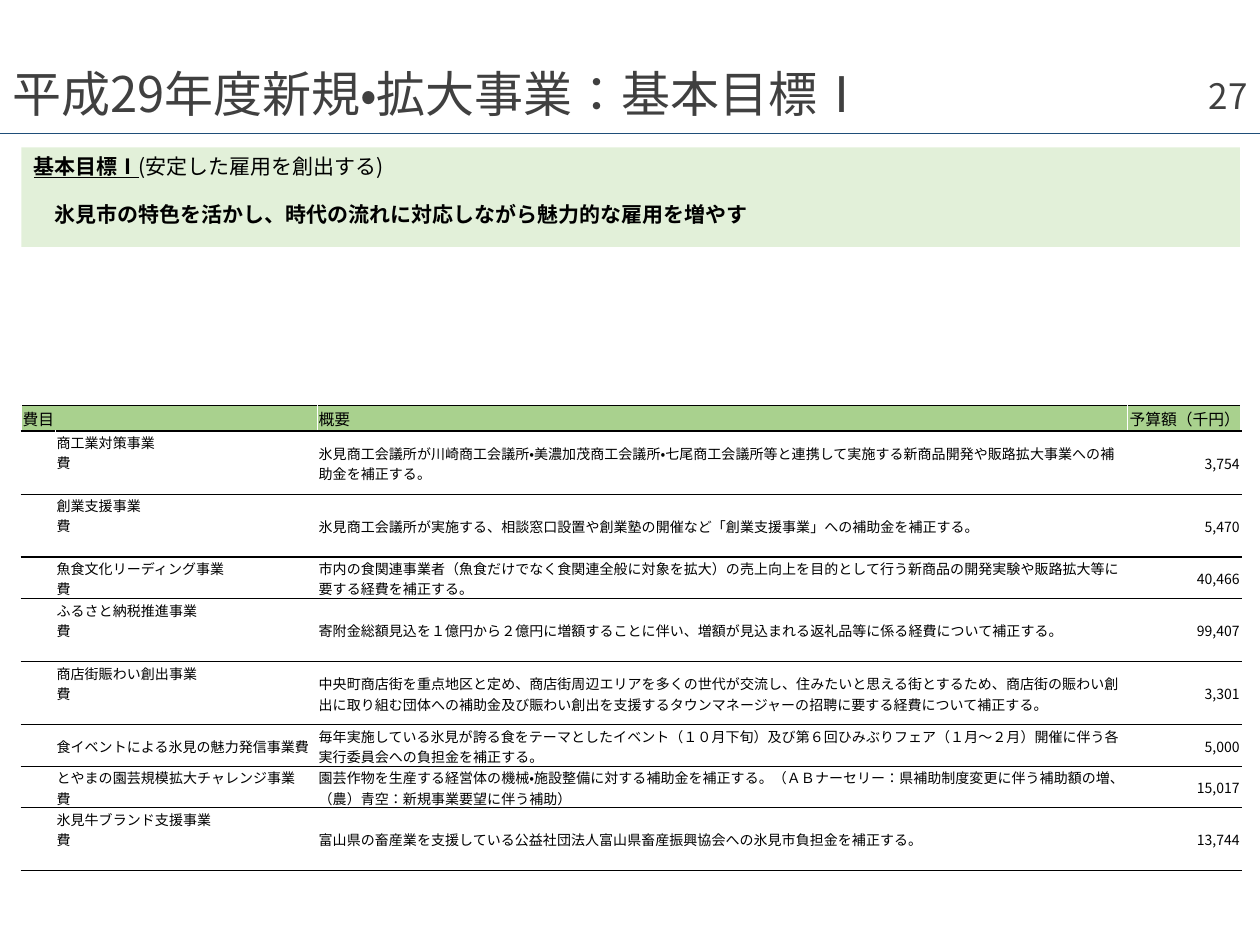
from pptx import Presentation
from pptx.dml.color import RGBColor
from pptx.enum.lang import MSO_LANGUAGE_ID as Lang
from pptx.enum.shapes import MSO_CONNECTOR, MSO_SHAPE
from pptx.enum.text import MSO_ANCHOR as Anchor, PP_ALIGN as Align
from pptx.oxml import parse_xml
from pptx.oxml.ns import nsdecls
from pptx.util import Inches, Pt

FONT = "Noto Sans CJK JP"
TITLE, PAGE = "平成29年度新規・拡大事業：基本目標Ⅰ", "27"
GOAL, NOTE = "基本目標Ⅰ", "(安定した雇用を創出する)"
AIM = "氷見市の特色を活かし、時代の流れに対応しながら魅力的な雇用を増やす"
HEAD = ("費目", "", "概要", "予算額（千円）")
# name, outline, budget, row height, weight of the line below
ITEMS = [
    ("商工業対策事業\v費",
     "氷見商工会議所が川崎商工会議所・美濃加茂商工会議所・七尾商工会議所等と連携して実施する"
     "新商品開発や販路拡大事業への補助金を補正する。", "3,754", 0.5, 0.5),
    ("創業支援事業\v費",
     "氷見商工会議所が実施する、相談窓口設置や創業塾の開催など「創業支援事業」への補助金を補正する。",
     "5,470", 0.5, 1),
    ("魚食文化リーディング事業\v費",
     "市内の食関連事業者（魚食だけでなく食関連全般に対象を拡大）の売上向上を目的として行う"
     "新商品の開発実験や販路拡大等に要する経費を補正する。", "40,466", 0.33, 0.5),
    ("ふるさと納税推進事業\v費",
     "寄附金総額見込を１億円から２億円に増額することに伴い、増額が見込まれる返礼品等に係る"
     "経費について補正する。", "99,407", 0.5, 1),
    ("商店街賑わい創出事業\v費",
     "中央町商店街を重点地区と定め、商店街周辺エリアを多くの世代が交流し、住みたいと思える街と"
     "するため、商店街の賑わい創出に取り組む団体への補助金及び賑わい創出を支援する"
     "タウンマネージャーの招聘に要する経費について補正する。", "3,301", 0.5, 0.5),
    ("食イベントによる氷見の魅力発信事業費",
     "毎年実施している氷見が誇る食をテーマとしたイベント（１０月下旬）及び第６回ひみぶりフェア"
     "（１月～２月）開催に伴う各実行委員会への負担金を補正する。", "5,000", 0.33, 0.5),
    ("とやまの園芸規模拡大チャレンジ事業\v費",
     "園芸作物を生産する経営体の機械・施設整備に対する補助金を補正する。（ＡＢナーセリー："
     "県補助制度変更に伴う補助額の増、（農）青空：新規事業要望に伴う補助）", "15,017", 0.33, 0.5),
    ("氷見牛ブランド支援事業\v費",
     "富山県の畜産業を支援している公益社団法人富山県畜産振興協会への氷見市負担金を補正する。",
     "13,744", 0.5, 1),
]
COLS = (0.27, 2.08, 6.43, 0.9)
HEAD_H = 0.2


def rgb(code):
    return RGBColor.from_string(code)


def style(para, size, color="000000", align=Align.LEFT):
    para.alignment = align
    font = para.font
    font.name, font.size = FONT, Pt(size)
    font.color.rgb = rgb(color)
    for run in para.runs:
        run.font.language_id = Lang.JAPANESE


def label(slide, box, text, size, align=Align.LEFT):
    frame = slide.shapes.add_textbox(*map(Inches, box)).text_frame
    frame.word_wrap = True
    frame.vertical_anchor = Anchor.MIDDLE
    para = frame.paragraphs[0]
    para.text = text
    style(para, size, "404040", align)
    return para


def border(cell, top, bottom):
    """White sides, black top and bottom of the given weights."""
    props = cell._tc.get_or_add_tcPr()
    sides = (("L", "FFFFFF", 1), ("R", "FFFFFF", 1),
             ("T", "000000", top), ("B", "000000", bottom))
    for spot, (side, color, weight) in enumerate(sides):
        props.insert(spot, parse_xml(
            f'<a:ln{side} {nsdecls("a")} w="{Pt(weight)}"><a:solidFill>'
            f'<a:srgbClr val="{color}"/></a:solidFill></a:ln{side}>'))


def fill_cell(cell, text, size, color, align, top, bottom):
    cell.margin_left = cell.margin_top = cell.margin_right = Inches(0.01)
    cell.margin_bottom = 0
    cell.vertical_anchor = Anchor.MIDDLE
    cell.fill.solid()
    cell.fill.fore_color.rgb = rgb(color)
    para = cell.text_frame.paragraphs[0]
    if text:
        para.text = text
    else:  # keeps an empty cell from stretching its row
        para._p.get_or_add_endParaRPr().set("sz", str(size * 100))
    style(para, size, align=align)
    border(cell, top, bottom)


def add_header(slide):
    label(slide, (0, 0.62, 10, 0.29), TITLE, 28).line_spacing = 0.9
    label(slide, (7.75, 0.56, 2.25, 0.4), PAGE, 20, Align.RIGHT)
    rule = slide.shapes.add_connector(
        MSO_CONNECTOR.STRAIGHT, 0, Inches(1.06), Inches(10), Inches(1.06))
    rule.line.color.rgb = rgb("1F4E79")
    rule.line.width = Pt(0.5)
    rule._element.spPr.append(parse_xml(f'<a:effectLst {nsdecls("a")}/>'))


def add_goal(slide):
    box = slide.shapes.add_shape(
        MSO_SHAPE.RECTANGLE, *map(Inches, (0.17, 1.17, 9.67, 0.79)))
    box.shadow.inherit = False
    box.fill.solid()
    box.fill.fore_color.rgb = rgb("E2F0D9")
    box.line.fill.background()
    frame = box.text_frame
    frame.word_wrap = True
    frame.vertical_anchor = Anchor.TOP
    first, aim = frame.paragraphs[0], frame.add_paragraph()
    goal = first.add_run()
    goal.text = GOAL
    goal.font.bold = goal.font.underline = True
    first.add_run().text = NOTE
    aim.text = AIM
    aim.space_before = Pt(13)
    for para in (first, aim):
        style(para, 12)
    aim.font.bold = True
    aim._p.get_or_add_pPr().set("marL", str(Pt(12)))


def add_budget(slide):
    heights = [HEAD_H] + [item[3] for item in ITEMS]
    frame = slide.shapes.add_table(
        len(heights), len(COLS),
        *map(Inches, (0.17, 3.22, sum(COLS), sum(heights))))
    table = frame.table
    for col, width in zip(table.columns, COLS):
        col.width = Inches(width)
    for row, height in zip(table.rows, heights):
        row.height = Inches(height)
    aligns = (Align.LEFT,) * 3 + (Align.RIGHT,)
    for c, text in enumerate(HEAD):
        fill_cell(table.cell(0, c), text, 9, "A9D18E", aligns[c], 1, 1)
    table.cell(0, 0).merge(table.cell(0, 1))
    above = 1
    for r, (name, note, cost, height, below) in enumerate(ITEMS, 1):
        for c, text in enumerate(("", name, note, cost)):
            fill_cell(table.cell(r, c), text, 8, "FFFFFF", aligns[c], above, below)
        if height == 0.5:
            table.cell(r, 1).vertical_anchor = Anchor.TOP
        above = below


def main():
    deck = Presentation()
    deck.slide_width, deck.slide_height = Inches(10), Inches(7.5)
    slide = deck.slides.add_slide(deck.slide_layouts[6])
    add_header(slide)
    add_goal(slide)
    add_budget(slide)
    deck.save("out.pptx")


if __name__ == "__main__":
    main()
